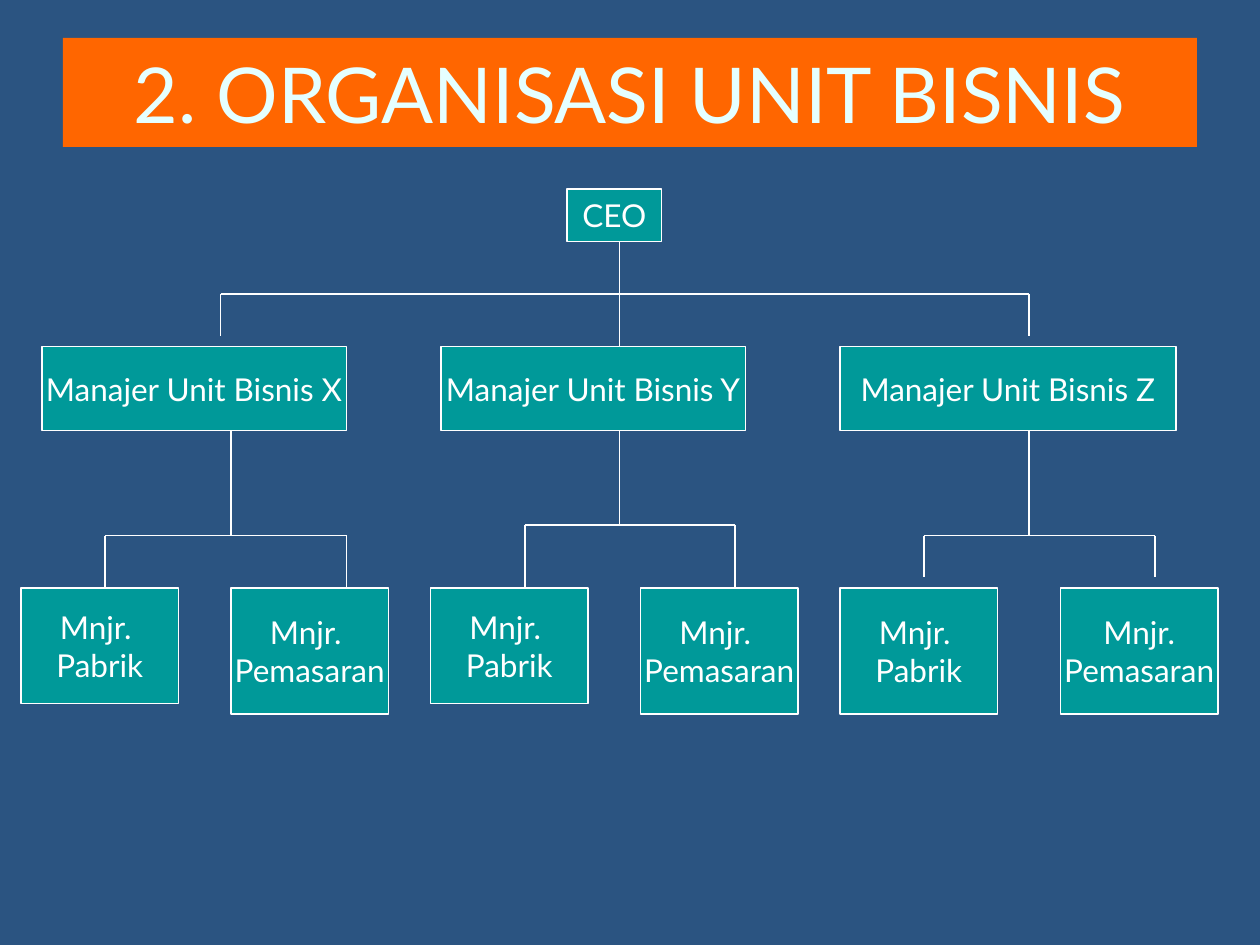
"""Build an organisation chart slide on a grid of 120 columns by 90 rows."""
from lxml import etree
from pptx import Presentation
from pptx import util as u
from pptx.dml.color import RGBColor
from pptx.enum import shapes, text
from pptx.oxml import ns

NAVY = RGBColor(0x2B, 0x54, 0x81)
ORANGE = RGBColor(0xFF, 0x66, 0x00)
ICE = RGBColor(0xE5, 0xFF, 0xFF)
TEAL = RGBColor(0x00, 0x99, 0x99)
WHITE = RGBColor(0xFF, 0xFF, 0xFF)
WIDE, HIGH = u.Inches(10), u.Inches(7.5)
COLS, ROWS = 120, 90
RULE = u.Pt(0.75)

HEAD = {"size": u.Pt(44), "name": "Lato"}
BODY = {"size": u.Pt(18), "name": "Lato"}
PLANT = ("Mnjr. ", "Pabrik")
SALES = ("Mnjr. ", "Pemasaran")

BOXES = [
    (54, 18, 9, 5, ["CEO"]),
    (4, 33, 29, 8, ["Manajer Unit Bisnis X"]),
    (42, 33, 29, 8, ["Manajer Unit Bisnis Y"]),
    (80, 33, 32, 8, ["Manajer Unit Bisnis Z"]),
    (2, 56, 15, 11, PLANT),
    (22, 56, 15, 12, SALES),
    (41, 56, 15, 11, PLANT),
    (61, 56, 15, 12, SALES),
    (80, 56, 15, 12, PLANT),
    (101, 56, 15, 12, ("Mnjr.", "Pemasaran")),
]
FORKS = [
    (59, 23, 33, 28, (21, 98), 32),
    (22, 41, 51, 51, (10, 33), 56),
    (59, 41, 50, 50, (50, 70), 56),
    (98, 41, 51, 51, (88, 110), 55),
]


def col(n):
    """Return the length of n grid columns."""
    return int(WIDE * n / COLS)


def row(n):
    """Return the length of n grid rows."""
    return int(HIGH * n / ROWS)


def add_box(slide, place, lines, fill, ink, form, edge=None, wrap=False):
    """Add a filled rectangle with centred lines of text."""
    x, y, w, h = place
    box = slide.shapes.add_shape(
        shapes.MSO_SHAPE.RECTANGLE, col(x), row(y), col(w), row(h))
    box.shadow.inherit = False
    box.fill.solid()
    box.fill.fore_color.rgb = fill
    if edge is None:
        box.line.fill.background()
    else:
        box.line.color.rgb = edge
        box.line.width = RULE
    frame = box.text_frame
    frame.word_wrap = wrap
    frame.vertical_anchor = text.MSO_ANCHOR.MIDDLE
    frame.text = "\n".join(lines)
    for para in frame.paragraphs:
        para.alignment = text.PP_ALIGN.CENTER
        font = para.runs[0].font
        font.color.rgb = ink
        for key, value in form.items():
            setattr(font, key, value)


def add_line(slide, x1, y1, x2, y2):
    """Add a thin white straight line between two grid points."""
    line = slide.shapes.add_connector(
        shapes.MSO_CONNECTOR.STRAIGHT, col(x1), row(y1), col(x2), row(y2))
    line.line.color.rgb = WHITE
    line.line.width = RULE
    etree.SubElement(line._element.spPr, ns.qn("a:effectLst"))


def add_fork(slide, stem, top, end, bar, sides, foot):
    """Add a stem, a crossbar and a drop at each side of it."""
    left, right = sides
    add_line(slide, stem, top, stem, end)
    add_line(slide, left, bar, right, bar)
    for side in sides:
        add_line(slide, side, bar, side, foot)


def main():
    """Build and save the slide."""
    deck = Presentation()
    deck.slide_width, deck.slide_height = WIDE, HIGH
    slide = deck.slides.add_slide(deck.slide_layouts[6])
    slide.background.fill.solid()
    slide.background.fill.fore_color.rgb = NAVY
    add_box(slide, (6, 3.6, 108, 10.4), ["2. ORGANISASI UNIT BISNIS"],
            ORANGE, ICE, HEAD, wrap=True)
    for *place, lines in BOXES:
        add_box(slide, place, lines, TEAL, WHITE, BODY, edge=WHITE)
    for fork in FORKS:
        add_fork(slide, *fork)
    deck.save("out.pptx")


if __name__ == "__main__":
    main()
